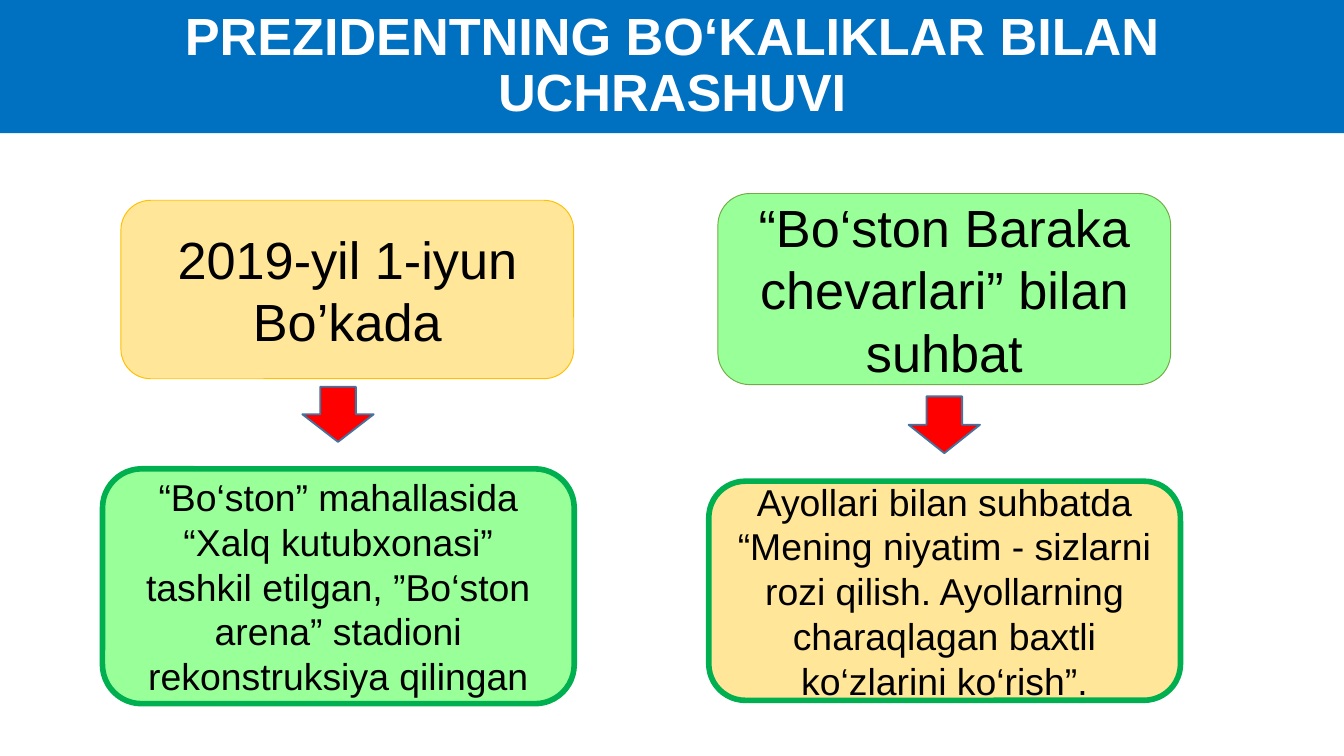
from pptx import Presentation
from pptx.dml.color import RGBColor
from pptx.enum.shapes import MSO_SHAPE
from pptx.enum.text import MSO_ANCHOR, PP_ALIGN
from pptx.util import Pt

ROUNDED, DOWN_ARROW = MSO_SHAPE.ROUNDED_RECTANGLE, MSO_SHAPE.DOWN_ARROW
MIDDLE, CENTER = MSO_ANCHOR.MIDDLE, PP_ALIGN.CENTER

BLUE, WHITE, BLACK = "0070C0", "FFFFFF", "000000"
YELLOW, LIGHT_GREEN, GREEN = "FFE699", "99FF99", "00B050"
RED, ARROW_EDGE = "FF0000", "43739E"


def color(value):
    return RGBColor.from_string(value)


class MeetingSlide:
    font = "Arial"

    def __init__(self, slide):
        self.slide = slide

    def add_label(self, shape, text, size, ink, bold=False):
        frame = shape.text_frame
        frame.word_wrap = True
        frame.vertical_anchor = MIDDLE
        paragraph = frame.paragraphs[0]
        paragraph.alignment = CENTER
        run = paragraph.add_run()
        run.text = text
        run.font.name = self.font
        run.font.size = Pt(size)
        run.font.bold = bold
        run.font.color.rgb = color(ink)
        return paragraph

    def title(self, text, width, height):
        banner = self.slide.shapes.title
        banner.left, banner.top = Pt(0), Pt(0)
        banner.width, banner.height = Pt(width), Pt(height)
        banner.fill.solid()
        banner.fill.fore_color.rgb = color(BLUE)
        self.add_label(banner, text, 28, WHITE, bold=True).line_spacing = 0.9

    def shape(self, kind, box, fill, edge, weight):
        shape = self.slide.shapes.add_shape(kind, *(Pt(length) for length in box))
        shape.shadow.inherit = False
        shape.fill.solid()
        shape.fill.fore_color.rgb = color(fill)
        shape.line.color.rgb = color(edge)
        shape.line.width = Pt(weight)
        return shape

    def card(self, box, text, size, fill, edge, weight):
        card = self.shape(ROUNDED, box, fill, edge, weight)
        self.add_label(card, text, size, BLACK)

    def arrow(self, box):
        self.shape(DOWN_ARROW, box, RED, ARROW_EDGE, 1)


def main():
    deck = Presentation()
    deck.slide_width, deck.slide_height = Pt(720), Pt(405)
    meeting = MeetingSlide(deck.slides.add_slide(deck.slide_layouts[5]))

    # Title banner
    meeting.title("PREZIDENTNING BO‘KALIKLAR BILAN UCHRASHUVI", 720, 71.3)

    # Each column: topic, its fill and edge, arrow, outcome and its fill
    columns = [
        ((64.8, 107.3, 242.6, 95.6), "2019-yil 1-iyun Bo’kada", YELLOW, "FFC000",
         (162, 207.2, 38.2, 29.5),
         (54.9, 251.2, 252.7, 125.8),
         "“Bo‘ston” mahallasida “Xalq kutubxonasi” tashkil etilgan, "
         "”Bo‘ston arena” stadioni rekonstruksiya qilingan", LIGHT_GREEN),
        ((384.6, 103.7, 242.6, 102.4), "“Bo‘ston Baraka chevarlari” bilan suhbat",
         LIGHT_GREEN, "70AD47",
         (486.8, 212.4, 38.2, 30.4),
         (379.7, 257.8, 252.7, 117.4),
         "Ayollari bilan suhbatda “Mening niyatim - sizlarni rozi qilish. "
         "Ayollarning charaqlagan baxtli ko‘zlarini ko‘rish”.", YELLOW),
    ]
    for (topic_box, topic, topic_fill, topic_edge, arrow_box,
         outcome_box, outcome, outcome_fill) in columns:
        meeting.card(topic_box, topic, 28, topic_fill, topic_edge, 0.5)
        meeting.arrow(arrow_box)
        meeting.card(outcome_box, outcome, 20, outcome_fill, GREEN, 3)

    deck.save("out.pptx")


if __name__ == "__main__":
    main()
